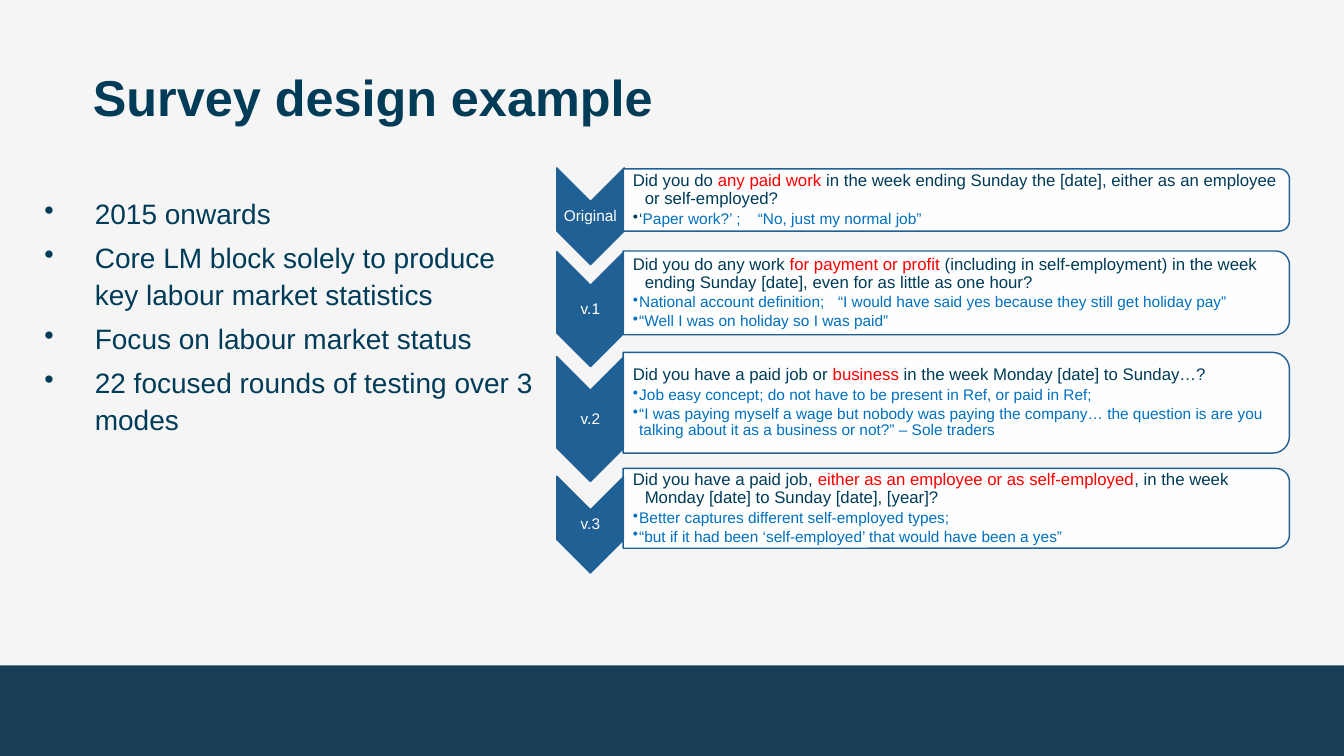
"""Build the survey design example slide."""
from dataclasses import dataclass

import pptx
import pptx.dml.color
import pptx.enum.shapes
import pptx.enum.text
import pptx.oxml.ns
import pptx.util
from lxml import etree

Cm, Pt = pptx.util.Cm, pptx.util.Pt
RGB = pptx.dml.color.RGBColor.from_string
qn = pptx.oxml.ns.qn
MSO_SHAPE = pptx.enum.shapes.MSO_SHAPE
ANCHOR = pptx.enum.text.MSO_ANCHOR
ALIGN = pptx.enum.text.PP_ALIGN


@dataclass(frozen=True)
class Theme:
    """Colours, font and type sizes of the slide."""
    font: str = "Arial"
    page: str = "F5F5F6"
    band: str = "183E56"
    heading: str = "003C57"
    ink: str = "003B57"
    step: str = "206095"
    white: str = "FFFFFF"
    changed: str = "FF0000"
    feedback: str = "0070C0"
    title_size: float = 36
    point_size: float = 20
    question_size: float = 12
    comment_size: float = 11


THEME = Theme()

POINTS = [
    "2015 onwards",
    "Core LM block solely to produce key labour market statistics",
    "Focus on labour market status",
    "22 focused rounds of testing over 3 modes",
]

VERSIONS = [
    dict(label="Original", middle=5.04, height=1.57, arrow=2.44, tab=3.15,
         question=("Did you do ", "any paid work ",
                   "in the week ending Sunday the [date], either as an employee or self-employed?"),
         comments=[[("‘", THEME.ink),
                    ("Paper work?’ ;\t“No, just my normal job”", THEME.feedback)]]),
    dict(label="v.1", middle=7.38, height=2.11, arrow=2.9, tab=5.17,
         question=("Did you do any work ", "for payment or profit ",
                   "(including in self-employment) in the week ending Sunday [date], "
                   "even for as little as one hour?"),
         comments=[[("National account definition;\t“I would have said yes because "
                     "they still get holiday pay”", THEME.feedback)],
                   [("“Well I was on holiday so I was paid”", THEME.feedback)]]),
    dict(label="v.2", middle=10.15, height=2.54, arrow=3.15, tab=None,
         question=("Did you have a paid job or ", "business",
                   " in the week Monday [date] to Sunday…?"),
         comments=[[("Job easy concept; do not have to be present in Ref, or paid in Ref;",
                     THEME.feedback)],
                   [("“I was paying myself a wage but nobody was paying the company… the question "
                     "is are you talking about it as a business or not?” – Sole traders",
                     THEME.feedback)]]),
    dict(label="v.3", middle=12.81, height=2.01, arrow=2.44, tab=None,
         question=("Did you have a paid job, ", "either as an employee or as self-employed",
                   ", in the week Monday [date] to Sunday [date], [year]?"),
         comments=[[("Better captures different self-employed types;", THEME.feedback)],
                   [("“but if it had been ‘self-employed’ that would have been a yes”",
                     THEME.feedback)]]),
]


def assign(target, values):
    """Set each attribute named in values on target."""
    for name, value in values.items():
        setattr(target, name, value)


def format_frame(frame, anchor=ANCHOR.TOP, inset=0, left_inset=None):
    """Set wrapping, anchor and margins of a text frame."""
    assign(frame, dict(
        word_wrap=True, auto_size=pptx.enum.text.MSO_AUTO_SIZE.NONE, vertical_anchor=anchor,
        margin_left=Cm(inset if left_inset is None else left_inset),
        margin_right=Cm(inset), margin_top=Cm(inset), margin_bottom=Cm(inset)))


def write(frame, index, runs, size, spacing, after, align=ALIGN.LEFT,
          hanging=0, bullet=False, tab=None, bold=False):
    """Write one paragraph of coloured runs."""
    paragraph = frame.add_paragraph() if index else frame.paragraphs[0]
    properties = paragraph._p.get_or_add_pPr()
    if hanging:
        properties.set("marL", str(Cm(hanging)))
        properties.set("indent", str(-Cm(hanging)))
    if bullet:
        etree.SubElement(properties, qn("a:buChar")).set("char", "•")
    if tab:
        stops = etree.SubElement(properties, qn("a:tabLst"))
        etree.SubElement(stops, qn("a:tab"), pos=str(Cm(tab)), algn="l")
    assign(paragraph, dict(alignment=align, line_spacing=spacing,
                           space_before=Pt(0), space_after=Pt(after)))
    for text, colour in runs:
        run = paragraph.add_run()
        run.text = text
        assign(run.font, dict(name=THEME.font, size=Pt(size), bold=bold))
        run.font.color.rgb = RGB(colour)


def add_text(slide, left, top, width, height, **frame_values):
    """Add a text box and return its text frame."""
    frame = slide.shapes.add_textbox(Cm(left), Cm(top), Cm(width), Cm(height)).text_frame
    format_frame(frame, **frame_values)
    return frame


def add_block(slide, kind, centre, middle, width, height, fill, line=None, rotation=0):
    """Add a filled shape around its centre."""
    block = slide.shapes.add_shape(kind, Cm(centre - width / 2), Cm(middle - height / 2),
                                   Cm(width), Cm(height))
    block.rotation = rotation
    block.shadow.inherit = False
    block.fill.solid()
    block.fill.fore_color.rgb = RGB(fill)
    if line:
        block.line.color.rgb = RGB(line)
        block.line.width = Pt(1)
    else:
        block.line.fill.background()
    return block


def add_title(slide, text):
    """Place and format the title."""
    title = slide.shapes.title
    assign(title, dict(left=Cm(2.34), top=Cm(1.78), width=Cm(29.21), height=Cm(1.47)))
    format_frame(title.text_frame)
    write(title.text_frame, 0, [(text, THEME.heading)], THEME.title_size, 0.95, 10, bold=True)


def add_points(slide):
    """Add the bulleted background points."""
    frame = add_text(slide, 1.12, 4.88, 12.6, 6.1)
    for index, point in enumerate(POINTS):
        write(frame, index, [(point, THEME.ink)], THEME.point_size, 1.1, 5,
              hanging=1.27, bullet=True)


def add_version(slide, version):
    """Add one step: chevron, label and question panel."""
    middle, height = version["middle"], version["height"]
    arrow_centre, arrow_width, arrow_middle = 14.88, 1.7, middle + 0.41
    add_block(slide, MSO_SHAPE.CHEVRON, arrow_centre, arrow_middle, version["arrow"], arrow_width,
              THEME.step, THEME.step, rotation=90)
    label = add_text(slide, arrow_centre - arrow_width / 2, arrow_middle - 0.4, arrow_width, 0.8,
                     anchor=ANCHOR.MIDDLE, inset=0.03)
    write(label, 0, [(version["label"], THEME.white)], THEME.comment_size, 0.9, 0,
          align=ALIGN.CENTER)

    panel = add_block(slide, MSO_SHAPE.ROUND_2_SAME_RECTANGLE, 24.1, middle, height, 16.79,
                      THEME.white, THEME.step, rotation=90)
    fill_colour = next(panel.element.iter(qn("a:srgbClr")))
    etree.SubElement(fill_colour, qn("a:alpha")).set("val", "90000")

    frame = add_text(slide, 15.72, middle - height / 2, 16.69, height,
                     anchor=ANCHOR.MIDDLE, inset=0.03, left_inset=0.23)
    question = zip(version["question"], (THEME.ink, THEME.changed, THEME.ink))
    write(frame, 0, question, THEME.question_size, 0.9, 1.8, hanging=0.3)
    for index, runs in enumerate(version["comments"], 1):
        tab = version["tab"] if index == 1 else None
        write(frame, index, runs, THEME.comment_size, 0.9, 1.65,
              hanging=0.16, bullet=True, tab=tab)


def main():
    """Build and save the slide."""
    deck = pptx.Presentation()
    assign(deck, dict(slide_width=Cm(33.87), slide_height=Cm(19.05)))
    slide = deck.slides.add_slide(deck.slide_layouts[5])
    slide.background.fill.solid()
    slide.background.fill.fore_color.rgb = RGB(THEME.page)
    add_block(slide, MSO_SHAPE.RECTANGLE, 33.87 / 2, 17.91, 33.87, 2.28, THEME.band)
    add_title(slide, "Survey design example")
    add_points(slide)
    for version in VERSIONS:
        add_version(slide, version)
    deck.save("out.pptx")


if __name__ == "__main__":
    main()
